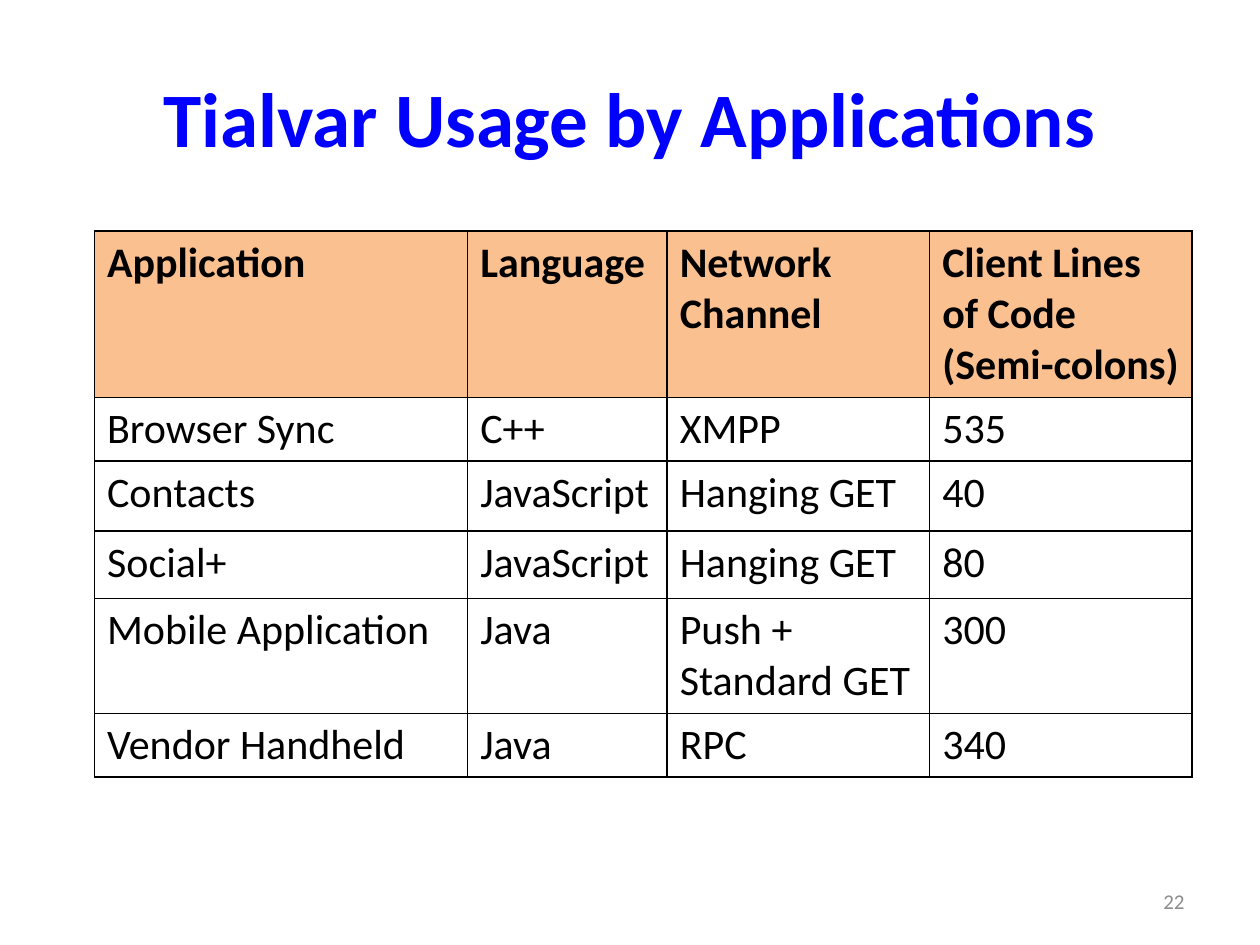
from dataclasses import dataclass

from lxml import etree
from pptx import Presentation
from pptx.dml.color import RGBColor
from pptx.enum.text import MSO_ANCHOR, PP_ALIGN
from pptx.oxml.ns import qn
from pptx.util import Pt

CENTER, RIGHT = PP_ALIGN.CENTER, PP_ALIGN.RIGHT
MIDDLE = MSO_ANCHOR.MIDDLE
FONT = "Calibri"
COLORS = {
    "title": "0000FF",
    "number": "8C8C8C",
    "text": "000000",
    "border": "000000",
    "header": "FAC090",
    "body": "FFFFFF",
}
COLUMN_WIDTHS = [213.3, 114, 150, 150]
ROW_HEIGHTS = [95, 36.5, 40, 38.4, 65.8, 36.5]
ROWS = [
    ["Application", "Language", "Network Channel", "Client Lines of Code\n(Semi-colons)"],
    ["Browser Sync", "C++", "XMPP", "535"],
    ["Contacts", "JavaScript", "Hanging GET", "40"],
    ["Social+", "JavaScript", "Hanging GET", "80"],
    ["Mobile Application", "Java", "Push + Standard GET", "300"],
    ["Vendor Handheld", "Java", "RPC", "340"],
]


@dataclass
class Label:
    text: str
    left: float
    top: float
    width: float
    height: float
    size: float
    color: str
    align: PP_ALIGN
    bold: bool = False


LABELS = [
    Label("Tialvar Usage by Applications", 36, 21.6, 648, 90, 44, "title", CENTER, True),
    Label("22", 516, 500.4, 168, 28.8, 12, "number", RIGHT),
]


def set_font(p, size: float, color: str, bold: bool) -> None:
    p.font.name = FONT
    p.font.size = Pt(size)
    p.font.bold = bold
    p.font.color.rgb = RGBColor.from_string(COLORS[color])


def add_label(s, label: Label) -> None:
    box = s.shapes.add_textbox(
        Pt(label.left), Pt(label.top), Pt(label.width), Pt(label.height)
    )
    tf = box.text_frame
    tf.word_wrap = True
    tf.vertical_anchor = MIDDLE
    p = tf.paragraphs[0]
    p.text = label.text
    p.alignment = label.align
    set_font(p, label.size, label.color, label.bold)


def set_borders(cell) -> None:
    """Give the cell a thin line on all four sides, ahead of its fill."""
    props = cell._tc.get_or_add_tcPr()
    for i, side in enumerate(("a:lnL", "a:lnR", "a:lnT", "a:lnB")):
        line = etree.Element(qn(side), w=str(Pt(1)))
        fill = etree.SubElement(line, qn("a:solidFill"))
        etree.SubElement(fill, qn("a:srgbClr"), val=COLORS["border"])
        props.insert(i, line)


def add_usage_table(s, left: float, top: float) -> None:
    table = s.shapes.add_table(
        len(ROWS), len(COLUMN_WIDTHS), Pt(left), Pt(top),
        Pt(sum(COLUMN_WIDTHS)), Pt(sum(ROW_HEIGHTS)),
    ).table
    table.horz_banding = False
    for column, width in zip(table.columns, COLUMN_WIDTHS):
        column.width = Pt(width)
    for i, (row, height) in enumerate(zip(table.rows, ROW_HEIGHTS)):
        row.height = Pt(height)
        is_header = i == 0
        fill = COLORS["header" if is_header else "body"]
        for cell, text in zip(row.cells, ROWS[i]):
            cell.text = text
            cell.fill.solid()
            cell.fill.fore_color.rgb = RGBColor.from_string(fill)
            set_borders(cell)
            for p in cell.text_frame.paragraphs:
                set_font(p, 24, "text", is_header)


def main() -> None:
    prs = Presentation()
    prs.slide_width, prs.slide_height = Pt(720), Pt(540)
    s = prs.slides.add_slide(prs.slide_layouts[6])
    for label in LABELS:
        add_label(s, label)
    add_usage_table(s, 54, 132)
    prs.save("out.pptx")


if __name__ == "__main__":
    main()
